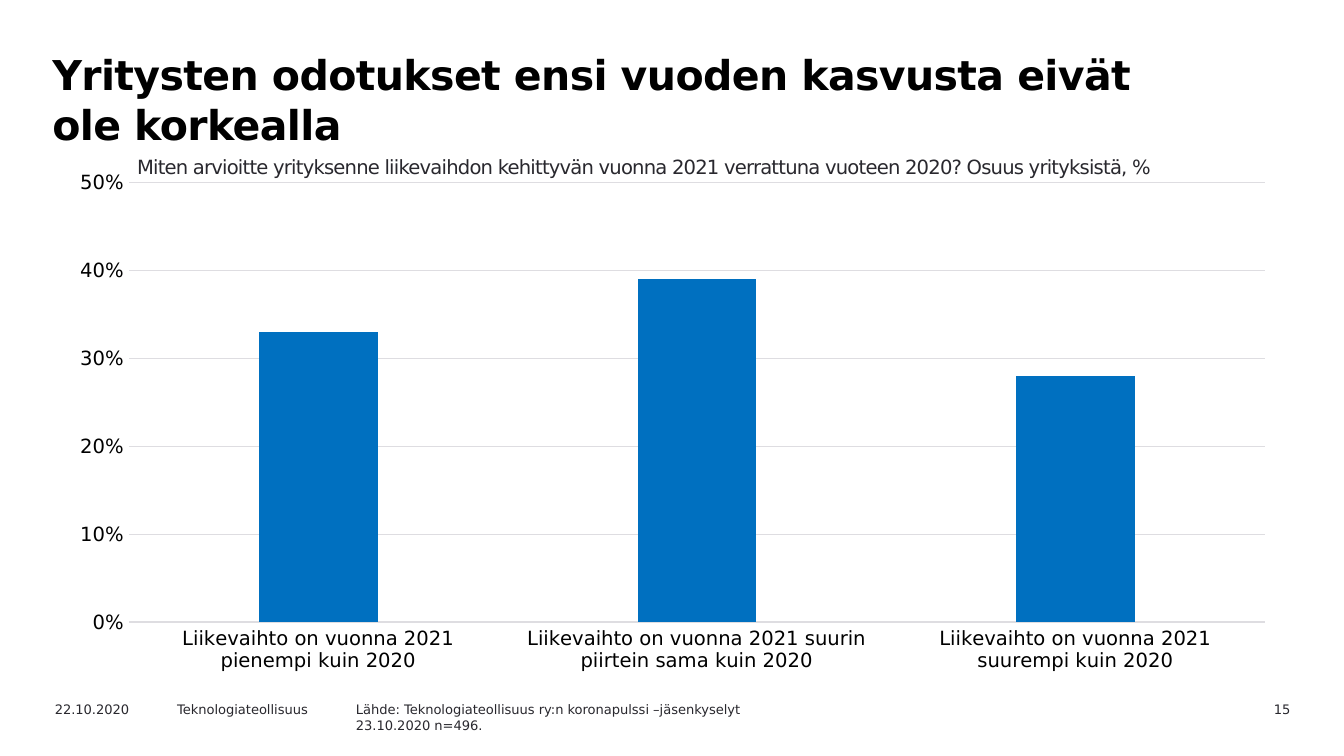
from lxml import etree
from pptx import Presentation
from pptx.chart.data import CategoryChartData
from pptx.dml.color import RGBColor
from pptx.enum.chart import XL_CHART_TYPE as ChartType, XL_TICK_MARK as TickMark
from pptx.enum.text import PP_ALIGN as Align
from pptx.oxml import parse_xml
from pptx.oxml.ns import nsdecls
from pptx.util import Inches, Pt

FONT = "DejaVu Sans"
BLACK, DARK, GRID, BLUE = "000000", "29282E", "DEDDE1", "0070C0"


def color(value):
    return RGBColor.from_string(value)


def add_text(bounds, lines, size, shade=DARK, bold=False, align=Align.LEFT,
             insets=(0.1, 0.05), spacing=None, line_height=None):
    """Add a wrapped text box; insets are horizontal and vertical, spacing is in points."""
    box = slide.shapes.add_textbox(*map(Inches, bounds))
    frame = box.text_frame
    side, edge = map(Inches, insets)
    layout = {"word_wrap": True, "margin_left": side, "margin_right": side,
              "margin_top": edge, "margin_bottom": edge}
    for name, value in layout.items():
        setattr(frame, name, value)
    for index, line in enumerate(lines):
        para = frame.paragraphs[0] if index == 0 else frame.add_paragraph()
        para.alignment = align
        if line_height:
            para.line_spacing = Pt(line_height)
        span = para.add_run()
        span.text = line
        for name, value in {"name": FONT, "size": Pt(size), "bold": bold}.items():
            setattr(span.font, name, value)
        span.font.color.rgb = color(shade)
        if spacing:
            span._r.get_or_add_rPr().set("spc", str(round(spacing * 100)))


deck = Presentation()
deck.slide_width, deck.slide_height = Inches(10), Inches(10 * 9 / 16)
slide = deck.slides.add_slide(deck.slide_layouts[6])

# Title
add_text((0.28, 0.31, 8.74, 0.71),
         ["Yritysten odotukset ensi vuoden kasvusta eivät ole korkealla"],
         22, BLACK, bold=True, insets=(0.11, 0.05), spacing=-0.3, line_height=27)

# Turnover expectations chart
data = CategoryChartData(number_format="0%")
data.categories = [
    "Liikevaihto on vuonna 2021 pienempi kuin 2020",
    "Liikevaihto on vuonna 2021 suurin piirtein sama kuin 2020",
    "Liikevaihto on vuonna 2021 suurempi kuin 2020",
]
data.add_series("Series 1", [0.33, 0.39, 0.28])
chart_width, chart_height = 9.18, 3.87
chart_bounds = map(Inches, (0.42, 1.21, chart_width, chart_height))
chart = slide.shapes.add_chart(ChartType.COLUMN_CLUSTERED, *chart_bounds, data).chart
chart.has_legend = False
chart.has_title = False
chart.font.name, chart.font.size = FONT, Pt(10)
chart.font.color.rgb = color(DARK)

plot = chart.plots[0]
plot.vary_by_categories = False
plot.gap_width, plot.overlap = 219, -27
bars = plot.series[0].format.fill
bars.solid()
bars.fore_color.rgb = color(BLUE)

category_axis, value_axis = chart.category_axis, chart.value_axis
for axis in (category_axis, value_axis):
    axis.major_tick_mark = axis.minor_tick_mark = TickMark.NONE
    axis.tick_labels.font.name = FONT
    axis.tick_labels.font.size = Pt(10.5)
    axis.tick_labels.font.color.rgb = color(BLACK)

scale = {"minimum_scale": 0, "maximum_scale": 0.5, "major_unit": 0.1,
         "has_major_gridlines": True}
for name, value in scale.items():
    setattr(value_axis, name, value)
value_axis.tick_labels.number_format = "0%"
value_axis.tick_labels.number_format_is_linked = False
value_axis.format.line.fill.background()
for line in (category_axis.format.line, value_axis.major_gridlines.format.line):
    line.color.rgb = color(GRID)
    line.width = Pt(0.75)

# Fix the inner plot area as fractions of the chart
plot_area = chart._chartSpace.chart.plotArea
for old_layout in plot_area.findall("{*}layout"):
    plot_area.remove(old_layout)
layout = parse_xml(f"<c:layout {nsdecls('c')}><c:manualLayout/></c:layout>")
settings = {"layoutTarget": "inner", "xMode": "edge", "yMode": "edge",
            "x": 0.54 / chart_width, "y": 0.15 / chart_height,
            "w": 8.45 / chart_width, "h": 3.27 / chart_height}
for name, value in settings.items():
    tag = etree.QName(layout.nsmap["c"], name)
    etree.SubElement(layout[0], tag).set("val", str(value))
plot_area.insert(0, layout)

# Survey question
add_text((0.98, 1.11, 8.27, 0.26),
         ["Miten arvioitte yrityksenne liikevaihdon kehittyvän vuonna 2021 "
          "verrattuna vuoteen 2020? Osuus yrityksistä, %"],
         10.5, insets=(0.04, 0.04), spacing=-0.4)

# Footer
source = ["Lähde: Teknologiateollisuus ry:n koronapulssi –jäsenkyselyt",
          "23.10.2020 n=496."]
footer = [
    (0.31, 1, 0.18, ["22.10.2020"], Align.LEFT),
    (1.22, 1.42, 0.18, ["Teknologiateollisuus"], Align.LEFT),
    (2.55, 3.86, 0.32, source, Align.LEFT),
    (8.76, 0.94, 0.18, ["15"], Align.RIGHT),
]
for left, width, height, lines, align in footer:
    add_text((left, 5.17, width, height), lines, 7, align=align)

deck.save("out.pptx")
